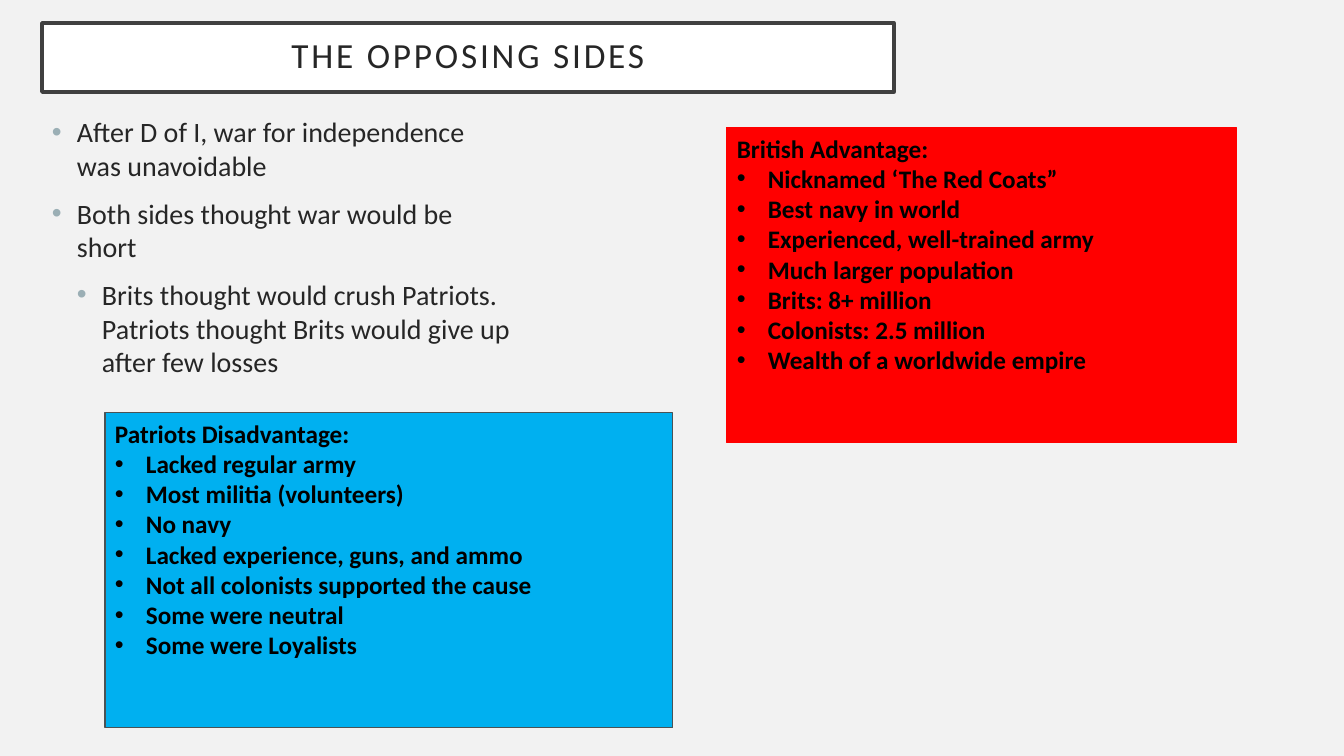
from dataclasses import dataclass

from lxml.etree import SubElement
from pptx import Presentation
from pptx.dml.color import RGBColor
from pptx.enum.shapes import MSO_SHAPE
from pptx.enum.text import MSO_ANCHOR, PP_ALIGN
from pptx.oxml.ns import qn
from pptx.util import Pt

SCALE = 914400 / 100.8  # EMU in one px


def emu(px):
    return round(px * SCALE)


def rgb(code):
    return RGBColor.from_string(code)


@dataclass(frozen=True)
class Theme:
    font: str = "Calibri"
    back: str = "F2F2F2"
    white: str = "FFFFFF"
    frame: str = "404040"
    ink: str = "262626"
    black: str = "000000"
    dot: str = "9BAFB5"
    red: str = "FF0000"
    blue: str = "00B0F0"
    edge: str = "4A5356"
    head: float = 25.2
    body: float = 20
    card: float = 18


def write(para, text, *, font, size, color, bold=False, align=PP_ALIGN.LEFT,
          left=0, hang=0, dot=None, before=0, lines=1.0, track=0):
    """Fill one paragraph; a dot colour turns its bullet on."""
    para.alignment, para.line_spacing = align, lines
    para.space_before = Pt(before)
    run = para.add_run()
    run.text = text
    run.font.name, run.font.size, run.font.bold = font, Pt(size), bold
    run.font.color.rgb = rgb(color)
    if track:
        run.font._element.set("spc", str(track * 100))
    if dot:
        props = para._p.get_or_add_pPr()
        props.set("marL", str(emu(left)))
        props.set("indent", str(-emu(hang)))
        tint = SubElement(props, qn("a:buClr"))
        SubElement(tint, qn("a:srgbClr"), val=dot)
        SubElement(props, qn("a:buFont"), typeface="Arial")
        SubElement(props, qn("a:buChar"), char="•")


class Deck:
    def __init__(self, theme):
        self.theme = theme
        self.show = Presentation()
        self.show.slide_width, self.show.slide_height = emu(1344), emu(756)
        self.slide = self.show.slides.add_slide(self.show.slide_layouts[6])
        fill = self.slide.background.fill
        fill.solid()
        fill.fore_color.rgb = rgb(theme.back)

    def box(self, area, fill, line, width):
        shape = self.slide.shapes.add_shape(MSO_SHAPE.RECTANGLE, *map(emu, area))
        shape.shadow.inherit = False
        shape.fill.solid()
        shape.fill.fore_color.rgb = rgb(fill)
        shape.line.color.rgb = rgb(line)
        shape.line.width = Pt(width)
        shape.text_frame.word_wrap = True
        return shape.text_frame

    def title(self, text, area):
        look = self.theme
        frame = self.box(area, look.white, look.frame, 2.5)
        frame.vertical_anchor = MSO_ANCHOR.MIDDLE
        frame.margin_left = frame.margin_right = emu(20)
        frame.margin_top = frame.margin_bottom = emu(20)
        write(frame.paragraphs[0], text, font=look.font, size=look.head,
              color=look.ink, align=PP_ALIGN.CENTER, lines=0.9, track=2)

    def points(self, items, area):
        look = self.theme
        frame = self.slide.shapes.add_textbox(*map(emu, area)).text_frame
        frame.word_wrap = True
        for place, (level, text) in enumerate(items):
            para = frame.add_paragraph() if place else frame.paragraphs[0]
            para.level = level
            write(para, text, font=look.font, size=look.body, color=look.ink,
                  left=25 * (level + 1), hang=25, dot=look.dot, before=10)

    def card(self, head, items, area, fill, line):
        look = self.theme
        frame = self.box(area, fill, line, 0.75)
        frame.vertical_anchor = MSO_ANCHOR.TOP
        style = dict(font=look.font, size=look.card, color=look.black, bold=True)
        write(frame.paragraphs[0], head, **style)
        for text in items:
            write(frame.add_paragraph(), text, left=31, hang=31,
                  dot=look.black, **style)


def main():
    theme = Theme()
    deck = Deck(theme)

    # Title
    deck.title("THE OPPOSING SIDES", (42, 23, 852, 69))

    # Background to the war
    deck.points([
        (0, "After D of I, war for independence was unavoidable"),
        (0, "Both sides thought war would be short"),
        (1, "Brits thought would crush Patriots. "
            "Patriots thought Brits would give up after few losses"),
    ], (42, 110, 483, 642))

    # British side
    deck.card("British Advantage:", [
        "Nicknamed ‘The Red Coats”",
        "Best navy in world",
        "Experienced, well-trained army",
        "Much larger population",
        "Brits: 8+ million",
        "Colonists: 2.5 million",
        "Wealth of a worldwide empire",
    ], (727, 128, 510, 315), theme.red, theme.red)

    # Patriot side
    deck.card("Patriots Disadvantage:", [
        "Lacked regular army",
        "Most militia (volunteers)",
        "No navy",
        "Lacked experience, guns, and ammo",
        "Not all colonists supported the cause",
        "Some were neutral",
        "Some were Loyalists",
    ], (105, 413, 568, 315), theme.blue, theme.edge)

    deck.show.save("out.pptx")


if __name__ == "__main__":
    main()
